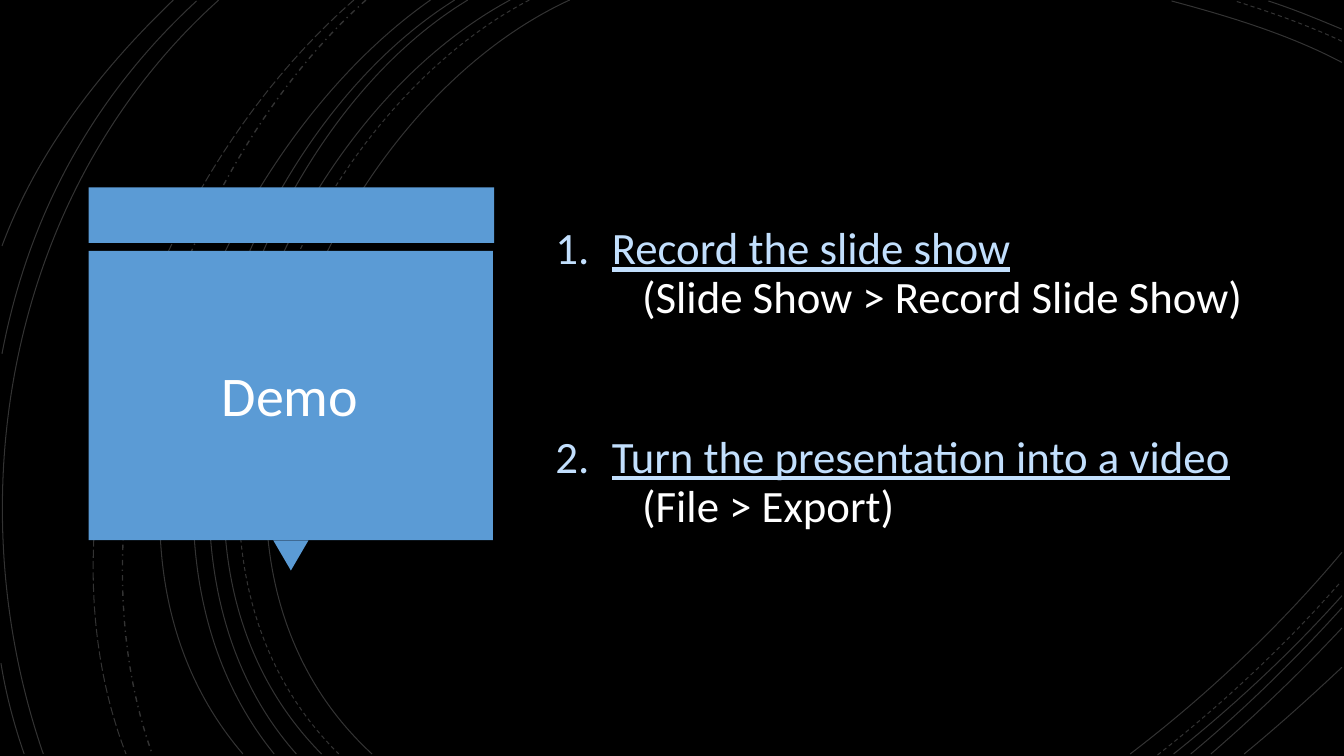
from dataclasses import dataclass

from lxml import etree
from pptx import Presentation
from pptx import util as u
from pptx.dml.color import RGBColor
from pptx.enum import dml, shapes, text
from pptx.oxml import ns

COLORS = {"black": "000000", "white": "FFFFFF", "blue": "5B9BD5", "pale": "C2DFFD"}
FONT = "Calibri"
ARC_OPACITY = "20000"
BODY_SIZE = 32
SECTION_GAP = 80
SOLID, DASH = dml.MSO_LINE.SOLID, dml.MSO_LINE.DASH


@dataclass
class Arc:
    start: tuple[float, float]
    bend_out: tuple[float, float]
    bend_in: tuple[float, float]
    end: tuple[float, float]
    dash: dml.MSO_LINE = SOLID
    weight: float = 0.75


@dataclass
class Block:
    kind: shapes.MSO_SHAPE
    left: float
    top: float
    width: float
    height: float
    rotation: float = 0


@dataclass
class Step:
    number: int
    heading: str
    detail: str


ARCS = [
    Arc((5.65, 0), (3.15, 1.15), (1.43, 5.4), (3.69, 7.48)),
    Arc((13.31, 0.62), (12.78, 0.34), (12.18, 0.16), (11.62, 0.01)),
    Arc((11.21, 7.48), (11.97, 6.9), (12.69, 6.22), (13.31, 5.48)),
    Arc((5.25, 0), (2.85, 1.25), (1.23, 5.37), (3.36, 7.48), DASH),
    Arc((13.31, 0.41), (12.97, 0.25), (12.6, 0.12), (12.25, 0.01), DASH),
    Arc((11.48, 7.49), (12.13, 6.98), (12.75, 6.4), (13.3, 5.77), DASH),
    Arc((5.06, 0), (2.7, 1.27), (1.1, 5.37), (3.19, 7.48)),
    Arc((13.31, 0.29), (13.07, 0.19), (12.83, 0.09), (12.58, 0.01)),
    Arc((11.64, 7.48), (12.23, 7.01), (12.8, 6.48), (13.31, 5.91)),
    Arc((4.64, 0), (2.44, 1.33), (1.1, 5.41), (2.94, 7.48)),
    Arc((11.81, 7.48), (12.34, 7.04), (12.84, 6.55), (13.31, 6.03)),
    Arc((4.51, 0), (2.31, 1.38), (0.97, 5.33), (2.72, 7.48)),
    Arc((12.01, 7.48), (12.46, 7.09), (12.9, 6.67), (13.31, 6.23)),
    Arc((4.27, 0), (2.17, 1.47), (0.53, 5.29), (2.41, 7.48)),
    Arc((12.34, 7.48), (12.67, 7.21), (12.99, 6.92), (13.31, 6.62)),
    Arc((3.63, 0), (1.76, 1.66), (0.65, 5.09), (1.51, 7.48), dml.MSO_LINE.DASH_DOT, 1),
    Arc((3.51, 0), (1.57, 1.69), (0.29, 4.99), (1.25, 7.48), dml.MSO_LINE.LONG_DASH),
    Arc((2.17, 0), (0.11, 1.85), (-0.46, 4.9), (0.43, 7.48)),
    Arc((1.95, 0.01), (0.92, 0.96), (0.28, 2.14), (0.02, 3.51)),
    Arc((0.01, 6.58), (0.06, 6.89), (0.14, 7.19), (0.24, 7.48)),
    Arc((1.72, 0), (1, 0.69), (0.37, 1.5), (0.02, 2.44)),
]
CALLOUT = [
    Block(shapes.MSO_SHAPE.RECTANGLE, 0.88, 1.86, 4.02, 0.55),
    Block(shapes.MSO_SHAPE.ISOSCELES_TRIANGLE, 2.71, 5.36, 0.35, 0.3, 180),
    Block(shapes.MSO_SHAPE.RECTANGLE, 0.88, 2.49, 4.01, 2.87),
]
STEPS = [
    Step(1, "Record the slide show", "(Slide Show > Record Slide Show)"),
    Step(2, "Turn the presentation into a video", "(File > Export)"),
]


def color(name: str) -> RGBColor:
    return RGBColor.from_string(COLORS[name])


def apply(target, values: dict) -> None:
    for name, value in values.items():
        setattr(target, name, value)


def draw_arc(group, arc: Arc) -> None:
    points = [(u.Inches(x), u.Inches(y)) for x, y in (arc.start, arc.bend_out, arc.bend_in, arc.end)]
    builder = group.shapes.build_freeform(*points[0], scale=1.0)
    builder.add_line_segments(points[1:], close=False)
    shape = builder.convert_to_shape()
    shape.shadow.inherit = False
    shape.fill.background()
    shape.line.color.rgb = color("white")
    apply(shape.line, {"width": u.Pt(arc.weight), "dash_style": arc.dash})
    tint = shape._element.find(".//" + ns.qn("a:ln")).find(".//" + ns.qn("a:srgbClr"))
    etree.SubElement(tint, ns.qn("a:alpha"), val=ARC_OPACITY)
    outline = shape._element.find(".//" + ns.qn("a:path"))
    curve = etree.SubElement(outline, ns.qn("a:cubicBezTo"))
    for segment in outline.findall(ns.qn("a:lnTo")):
        curve.append(segment[0])
        outline.remove(segment)


def draw_block(group, block: Block) -> None:
    shape = group.shapes.add_shape(
        block.kind, *map(u.Inches, (block.left, block.top, block.width, block.height)))
    shape.shadow.inherit = False
    shape.fill.solid()
    shape.fill.fore_color.rgb = color("blue")
    shape.line.fill.background()
    shape.rotation = block.rotation


def add_frame(page, left: float, top: float, width: float, height: float):
    box = page.shapes.add_textbox(*map(u.Inches, (left, top, width, height)))
    apply(box.text_frame, {"word_wrap": True, "vertical_anchor": text.MSO_ANCHOR.MIDDLE})
    return box.text_frame


def write(para, words: str, size: float, ink: str, underline: bool = False) -> None:
    para.line_spacing = 0.9
    span = para.add_run()
    span.text = words
    apply(span.font, {"name": FONT, "size": u.Pt(size), "underline": underline})
    span.font.color.rgb = color(ink)


def indent(para, margin: float, hanging: float = 0) -> None:
    properties = para._p.get_or_add_pPr()
    properties.set("marL", str(u.Inches(margin)))
    properties.set("indent", str(-u.Inches(hanging)))


def write_step(frame, step: Step) -> None:
    first = step.number == 1
    heading = frame.paragraphs[0] if first else frame.add_paragraph()
    indent(heading, 0.56, 0.56)
    etree.SubElement(heading._p.get_or_add_pPr(), ns.qn("a:buAutoNum"),
                     type="arabicPeriod", startAt=str(step.number))
    if not first:
        heading.space_before = u.Pt(SECTION_GAP)
    write(heading, step.heading, BODY_SIZE, "pale", True)
    detail = frame.add_paragraph()
    indent(detail, 0.86)
    write(detail, step.detail, BODY_SIZE, "white")


def main() -> None:
    deck = Presentation()
    apply(deck, {"slide_width": u.Inches(13.33), "slide_height": u.Inches(7.5)})
    page = deck.slides.add_slide(deck.slide_layouts[6])
    page.background.fill.solid()
    page.background.fill.fore_color.rgb = color("black")

    arcs = page.shapes.add_group_shape()
    for arc in ARCS:
        draw_arc(arcs, arc)
    callout = page.shapes.add_group_shape()
    for block in CALLOUT:
        draw_block(callout, block)

    title = add_frame(page, 0.99, 2.64, 3.77, 2.62).paragraphs[0]
    title.alignment = text.PP_ALIGN.CENTER
    write(title, "Demo", 40, "white")

    body = add_frame(page, 5.41, 1.66, 7.34, 4.2)
    for step in STEPS:
        write_step(body, step)
    deck.save("out.pptx")


if __name__ == "__main__":
    main()
